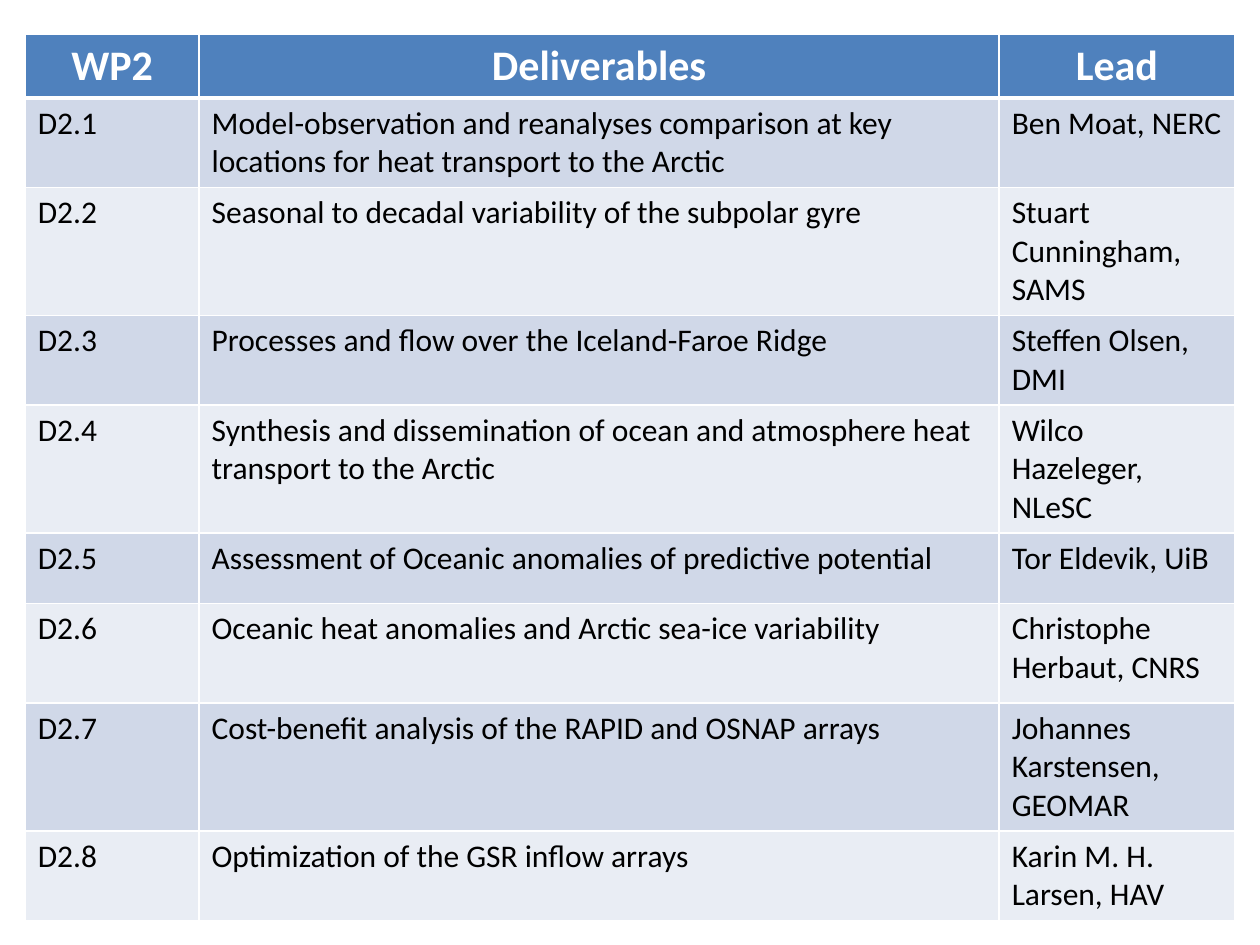
from dataclasses import dataclass

from lxml import etree
from pptx import Presentation
from pptx.dml.color import RGBColor
from pptx.enum.text import PP_ALIGN
from pptx.oxml.ns import qn
from pptx.util import Inches, Pt

CENTER, LEFT = PP_ALIGN.CENTER, PP_ALIGN.LEFT
BLANK_LAYOUT = 6


@dataclass(frozen=True)
class Theme:
    font: str = "Calibri"
    header_fill: str = "4F81BD"
    band_fills: tuple[str, str] = ("D0D8E8", "E9EDF4")
    header_text: str = "FFFFFF"
    body_text: str = "000000"
    border: str = "FFFFFF"
    header_size: int = 24
    body_size: int = 18
    thin_line: int = 1
    thick_line: int = 3


@dataclass(frozen=True)
class CellStyle:
    fill: str
    color: str
    size: int
    bold: bool
    alignment: PP_ALIGN
    top_line: int
    bottom_line: int


@dataclass(frozen=True)
class Deliverable:
    title: str
    lead: str
    height: float


THEME = Theme()
HEADINGS = ("WP2", "Deliverables", "Lead")
COLUMN_WIDTHS = (1.38, 6.35, 1.87)
HEADER_HEIGHT = 0.5
DELIVERABLES = (
    Deliverable("Model-observation and reanalyses comparison at key locations "
                "for heat transport to the Arctic", "Ben Moat, NERC", 0.57),
    Deliverable("Seasonal to decadal variability of the subpolar gyre",
                "Stuart Cunningham, SAMS", 0.82),
    Deliverable("Processes and flow over the Iceland-Faroe Ridge",
                "Steffen Olsen, DMI", 0.57),
    Deliverable("Synthesis and dissemination of ocean and atmosphere heat "
                "transport to the Arctic", "Wilco Hazeleger, NLeSC", 0.82),
    Deliverable("Assessment of Oceanic anomalies of predictive potential",
                "Tor Eldevik, UiB", 0.56),
    Deliverable("Oceanic heat anomalies and Arctic sea-ice variability",
                "Christophe Herbaut, CNRS", 0.79),
    Deliverable("Cost-benefit analysis of the RAPID and OSNAP arrays",
                "Johannes Karstensen, GEOMAR", 0.75),
    Deliverable("Optimization of the GSR inflow arrays",
                "Karin M. H. Larsen, HAV", 0.53),
)


def set_borders(cell, style: CellStyle) -> None:
    """Draw the four cell borders, which precede the fill in the XML."""
    widths = {"lnL": THEME.thin_line, "lnR": THEME.thin_line,
              "lnT": style.top_line, "lnB": style.bottom_line}
    properties = cell._tc.get_or_add_tcPr()
    for position, (side, width) in enumerate(widths.items()):
        line = etree.Element(qn(f"a:{side}"), w=str(Pt(width)))
        fill = etree.SubElement(line, qn("a:solidFill"))
        etree.SubElement(fill, qn("a:srgbClr"), val=THEME.border)
        properties.insert(position, line)


def fill_cell(cell, text: str, style: CellStyle) -> None:
    cell.fill.solid()
    cell.fill.fore_color.rgb = RGBColor.from_string(style.fill)
    set_borders(cell, style)
    paragraph = cell.text_frame.paragraphs[0]
    paragraph.alignment = style.alignment
    run = paragraph.add_run()
    run.text = text
    run.font.name = THEME.font
    run.font.size = Pt(style.size)
    run.font.bold = style.bold
    run.font.color.rgb = RGBColor.from_string(style.color)


def fill_row(table, index: int, height: float, texts: tuple[str, ...],
             style: CellStyle) -> None:
    table.rows[index].height = Inches(height)
    for column, text in enumerate(texts):
        fill_cell(table.cell(index, column), text, style)


def body_style(number: int) -> CellStyle:
    top_line = THEME.thick_line if number == 1 else THEME.thin_line
    return CellStyle(THEME.band_fills[(number - 1) % 2], THEME.body_text,
                     THEME.body_size, False, LEFT, top_line, THEME.thin_line)


def add_deliverables_table(slide) -> None:
    total_height = HEADER_HEIGHT + sum(item.height for item in DELIVERABLES)
    table = slide.shapes.add_table(
        len(DELIVERABLES) + 1, len(HEADINGS), Inches(0.2), Inches(0.27),
        Inches(sum(COLUMN_WIDTHS)), Inches(total_height)).table
    for column, width in zip(table.columns, COLUMN_WIDTHS):
        column.width = Inches(width)

    # Header row
    header_style = CellStyle(THEME.header_fill, THEME.header_text,
                             THEME.header_size, True, CENTER,
                             THEME.thin_line, THEME.thick_line)
    fill_row(table, 0, HEADER_HEIGHT, HEADINGS, header_style)

    # One banded row per deliverable
    for number, item in enumerate(DELIVERABLES, start=1):
        texts = (f"D2.{number}", item.title, item.lead)
        fill_row(table, number, item.height, texts, body_style(number))


def main() -> None:
    presentation = Presentation()
    presentation.slide_width = Inches(10)
    presentation.slide_height = Inches(7.5)
    slide = presentation.slides.add_slide(
        presentation.slide_layouts[BLANK_LAYOUT])
    add_deliverables_table(slide)
    presentation.save("out.pptx")


if __name__ == "__main__":
    main()
